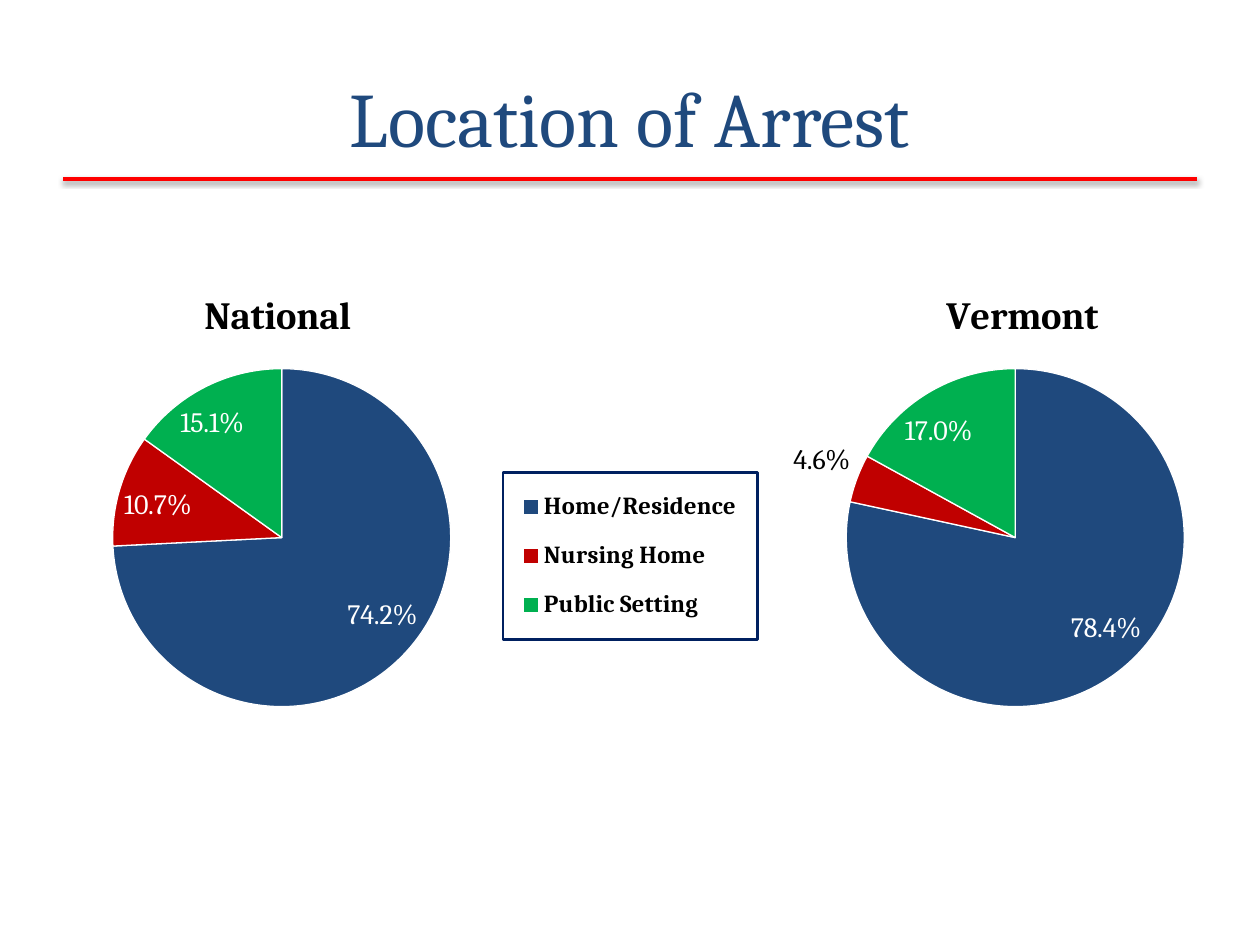
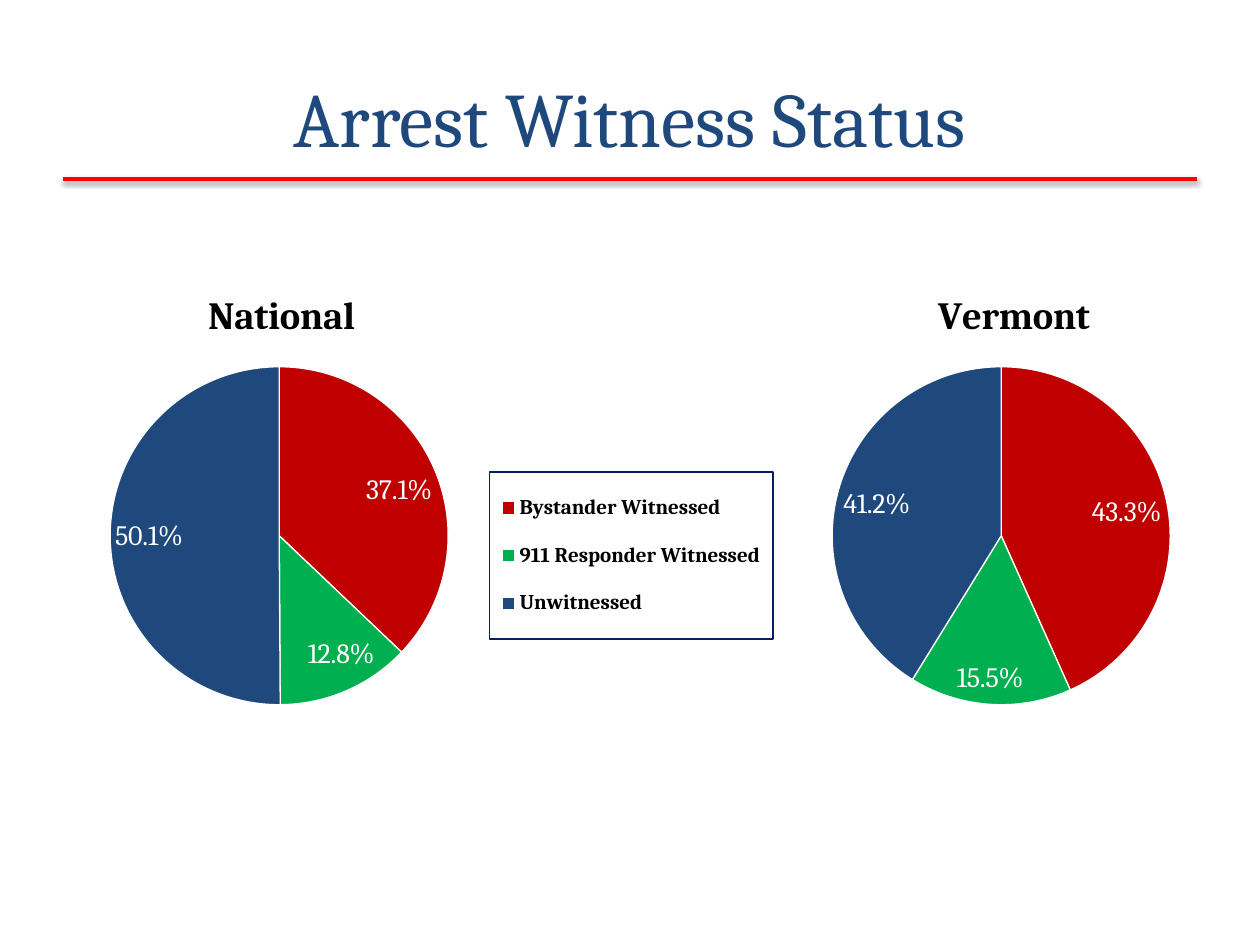
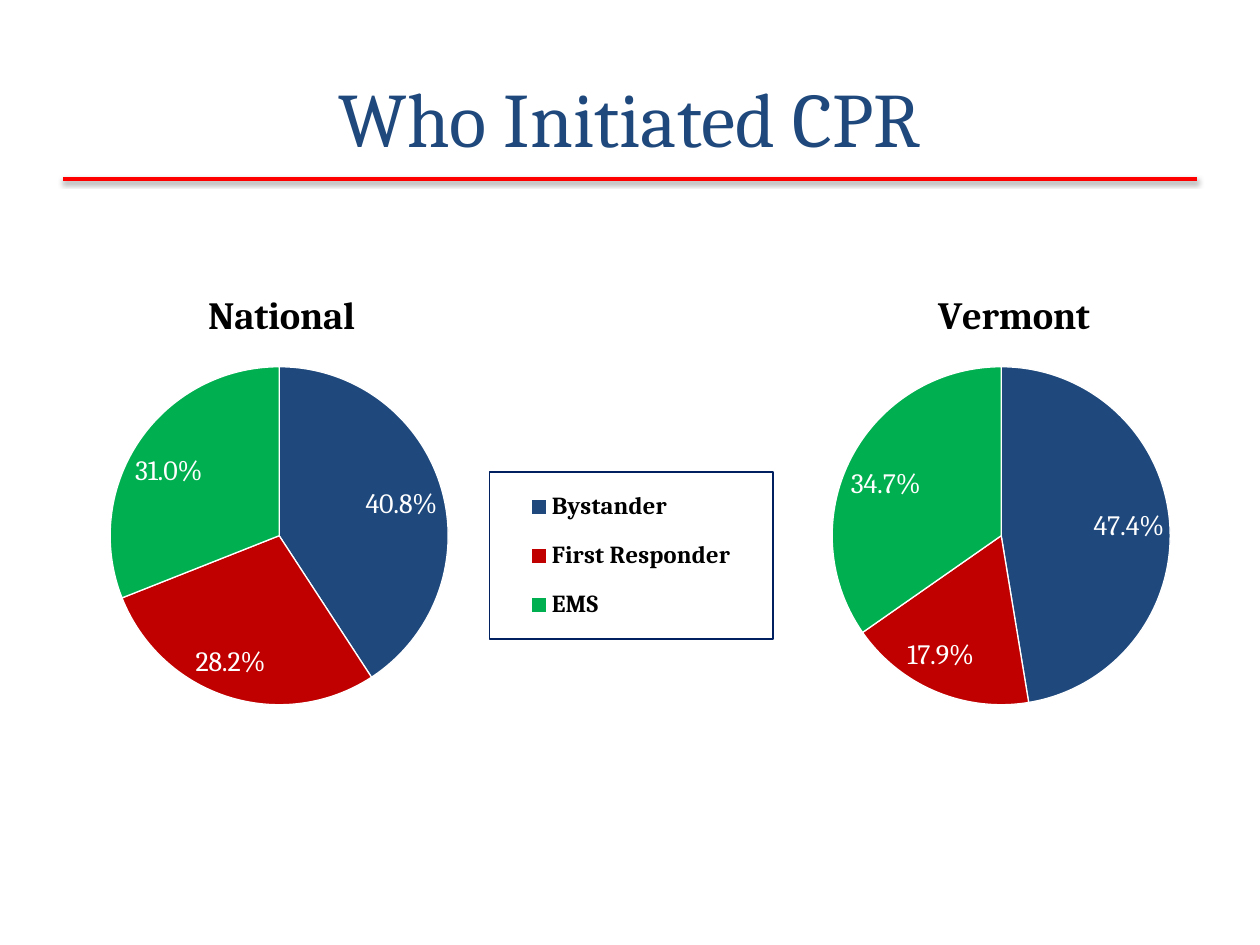
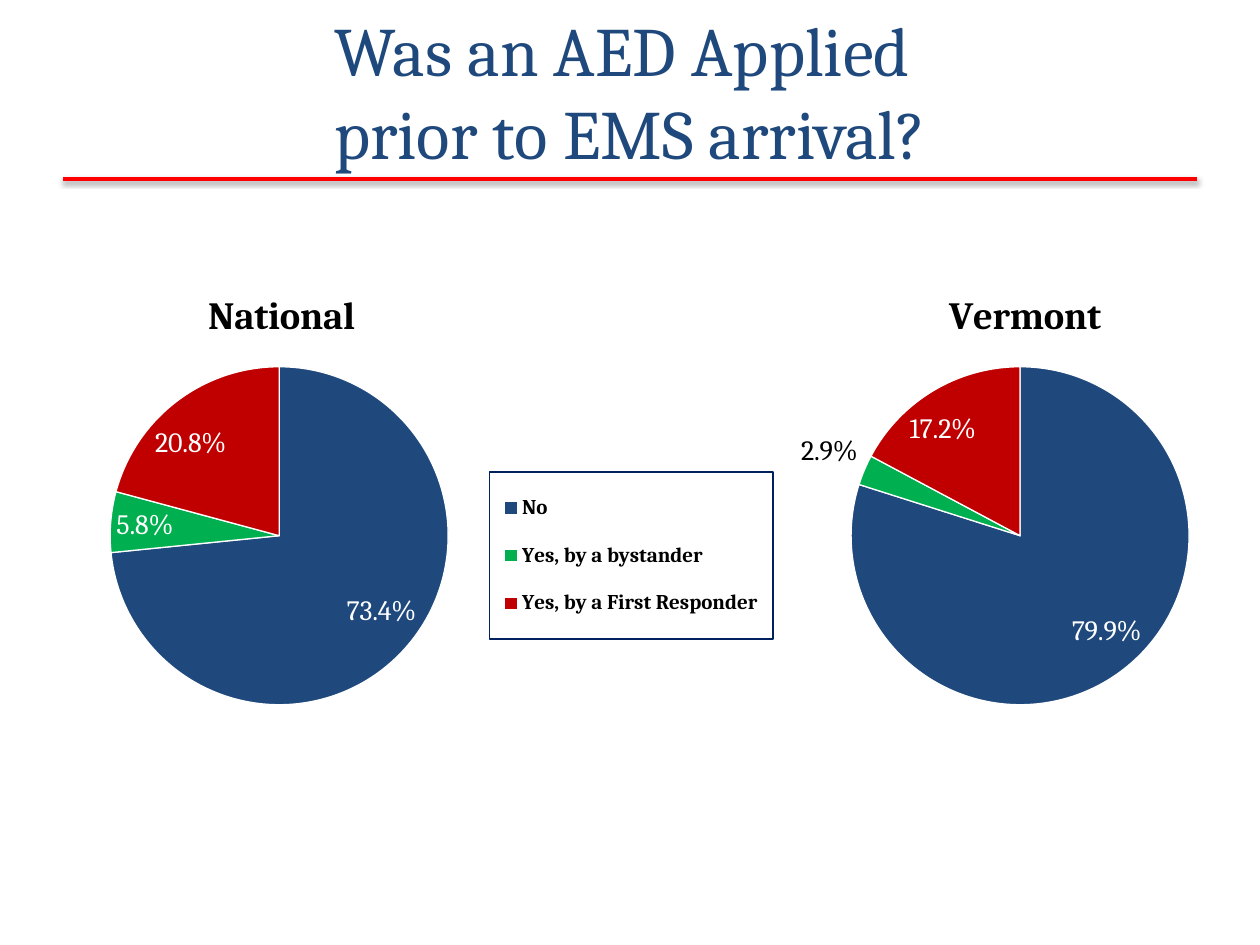
"""Build four slides that compare national and Vermont cardiac arrest figures."""
from dataclasses import dataclass
from typing import NamedTuple, Optional

from lxml import etree
from pptx import Presentation
from pptx import util as u
from pptx.chart.chart import Chart
from pptx.chart.data import CategoryChartData
from pptx.dml.color import RGBColor
from pptx.enum import chart as ch, shapes, text
from pptx.oxml import parse_xml
from pptx.oxml.ns import nsdecls, qn
from pptx.slide import Slide, SlideLayout
from pptx.text.text import Font, TextFrame

BLUE = RGBColor(0x1F, 0x49, 0x7D)
CRIMSON = RGBColor(0xC0, 0x00, 0x00)
GREEN = RGBColor(0x00, 0xB0, 0x50)
RED = RGBColor(0xFF, 0x00, 0x00)
NAVY = RGBColor(0x00, 0x20, 0x60)
WHITE = RGBColor(0xFF, 0xFF, 0xFF)
BLACK = RGBColor(0x00, 0x00, 0x00)
FACE = "Cambria"

MARGIN, CONTENT_WIDTH = 36, 648
RULE_TOP = 102.24
CHART_TOP, CHART_WIDTH, CHART_HEIGHT = 112.32, 450, 356.4
HEADING_TOP = 0.14


class Frame(NamedTuple):
    """Place inside a chart, as fractions of its width and height."""

    x: float
    y: float
    w: Optional[float] = None
    h: Optional[float] = None


@dataclass(frozen=True)
class Legend:
    """Frame, text size and border width of a legend."""

    frame: Frame
    size: float
    border: float


@dataclass(frozen=True)
class Pie:
    """One region's pie with its place on the slide."""

    region: str
    shares: tuple[float, ...]
    left: float
    heading_x: float = 0.27
    width: float = CHART_WIDTH
    outside: Optional[int] = None


@dataclass(frozen=True)
class Comparison:
    """One slide: a question, its answers and two regions."""

    title: str
    answers: dict[str, RGBColor]
    national: Pie
    vermont: Pie
    legend: Legend
    plot: Frame = Frame(0.095, 0.273, 0.548, 0.542)
    title_top: float = 21.6
    title_size: float = 44


WIDE_LEGEND = Frame(0.636, 0.442, 0.36, 0.268)

COMPARISONS = (
    Comparison(
        "Location of Arrest",
        {"Home/Residence": BLUE, "Nursing Home": CRIMSON, "Public Setting": GREEN},
        Pie("National", (74.2, 10.7, 15.1), -8.64),
        Pie("Vermont", (78.4, 4.6, 17), 440.64, 0.26, 370.08, outside=1),
        Legend(Frame(0.658, 0.442, 0.323, 0.268), 14, 1.5),
        plot=Frame(0.103, 0.276, 0.548, 0.542),
    ),
    Comparison(
        "Arrest Witness Status",
        {"Bystander Witnessed": CRIMSON, "911 Responder Witnessed": GREEN,
         "Unwitnessed": BLUE},
        Pie("National", (37.1, 12.8, 50.1), -6.48),
        Pie("Vermont", (43.3, 15.5, 41.2), 406.08, 0.28),
        Legend(WIDE_LEGEND, 12, 1),
    ),
    Comparison(
        "Who Initiated CPR",
        {"Bystander": BLUE, "First Responder": CRIMSON, "EMS": GREEN},
        Pie("National", (40.8, 28.2, 31), -6.48),
        Pie("Vermont", (47.4, 17.9, 34.7), 406.08, 0.28),
        Legend(WIDE_LEGEND, 14, 1),
    ),
    Comparison(
        "Was an AED Applied \vprior to EMS arrival?",
        {"No": BLUE, "Yes, by a bystander": GREEN,
         "Yes, by a First Responder": CRIMSON},
        Pie("National", (73.4, 5.8, 20.8), -6.48),
        Pie("Vermont", (79.9, 2.9, 17.2), 416.88, outside=1),
        Legend(WIDE_LEGEND, 12, 1),
        title_top=6.48,
        title_size=39.6,
    ),
)


def style(font: Font, *, size: float, color: RGBColor = BLACK, bold: bool = False) -> None:
    """Set face, size, colour and weight of a font."""
    font.name, font.size, font.bold = FACE, u.Pt(size), bold
    font.color.rgb = color


def write(frame: TextFrame, words: str, **look) -> None:
    """Put one centred paragraph into a text frame."""
    frame.text = words
    paragraph = frame.paragraphs[0]
    paragraph.alignment = text.PP_ALIGN.CENTER
    for run in paragraph.runs:
        style(run.font, **look)


def place(part: etree._Element, index: int, frame: Frame) -> None:
    """Give a chart part a manual layout as its child at the index."""
    for automatic in part.findall(qn("c:layout")):
        part.remove(automatic)
    settings = [("layoutTarget", "inner")] if part.tag == qn("c:plotArea") else []
    settings += [("xMode", "edge"), ("yMode", "edge")]
    settings += [(key, value) for key, value in frame._asdict().items() if value is not None]
    children = "".join(f'<c:{key} val="{value}"/>' for key, value in settings)
    part.insert(index, parse_xml(
        f'<c:layout {nsdecls("c")}><c:manualLayout>{children}</c:manualLayout></c:layout>'))


def add_rule(slide: Slide, layout: SlideLayout) -> None:
    """Draw the shadowed red rule and hand it to the shared layout."""
    rule = slide.shapes.add_connector(
        shapes.MSO_CONNECTOR.STRAIGHT, u.Pt(MARGIN), u.Pt(RULE_TOP),
        u.Pt(MARGIN + CONTENT_WIDTH), u.Pt(RULE_TOP))
    rule.line.color.rgb, rule.line.width = RED, u.Pt(2)
    rule.element.spPr.append(parse_xml(
        f'<a:effectLst {nsdecls("a")}><a:outerShdw blurRad="{u.Pt(3.1)}" '
        f'dist="{u.Pt(1.6)}" dir="5400000" rotWithShape="0">'
        '<a:srgbClr val="000000"><a:alpha val="38000"/></a:srgbClr>'
        '</a:outerShdw></a:effectLst>'))
    for holder in list(layout.placeholders):
        if holder.placeholder_format.type != shapes.PP_PLACEHOLDER.TITLE:
            holder.element.getparent().remove(holder.element)
    layout.shapes.element.append(rule.element)


def add_title(slide: Slide, topic: Comparison) -> None:
    """Move and fill the title placeholder."""
    title = slide.shapes.title
    title.left, title.top = u.Pt(MARGIN), u.Pt(topic.title_top)
    title.width, title.height = u.Pt(CONTENT_WIDTH), u.Pt(90)
    title.text_frame.auto_size = text.MSO_AUTO_SIZE.NONE
    title.text_frame.vertical_anchor = text.MSO_ANCHOR.MIDDLE
    write(title.text_frame, topic.title, size=topic.title_size, color=BLUE)


def add_legend(chart: Chart, legend: Legend) -> None:
    """Show the bordered legend beside the pie."""
    chart.has_legend = True
    chart.legend.position = ch.XL_LEGEND_POSITION.RIGHT
    chart.legend.include_in_layout = False
    style(chart.legend.font, size=legend.size, bold=True)
    box = chart.element.xpath("c:chart/c:legend")[0]
    place(box, 1, legend.frame)
    box.find(qn("c:txPr")).addprevious(parse_xml(
        f'<c:spPr {nsdecls("c", "a")}><a:ln w="{u.Pt(legend.border)}"><a:solidFill>'
        f'<a:srgbClr val="{NAVY}"/></a:solidFill></a:ln></c:spPr>'))


def add_outside_label(chart: Chart, index: int) -> None:
    """Give a narrow slice a black percentage that reads outside the pie."""
    label = chart.plots[0].series[0].points[index].data_label
    style(label.font, size=16)
    label.position = ch.XL_LABEL_POSITION.BEST_FIT
    entry = chart.element.xpath(".//c:ser/c:dLbls/c:dLbl")[0]
    entry.find(qn("c:showVal")).set("val", "0")
    entry.find(qn("c:showPercent")).set("val", "1")
    entry.find(qn("c:idx")).addnext(parse_xml(
        f'<c:numFmt {nsdecls("c")} formatCode="0.0%" sourceLinked="0"/>'))


def add_pie(slide: Slide, topic: Comparison, pie: Pie) -> Chart:
    """Draw one region's pie chart."""
    data = CategoryChartData()
    data.categories = list(topic.answers)
    data.add_series("Series 1", pie.shares)
    chart = slide.shapes.add_chart(
        ch.XL_CHART_TYPE.PIE, u.Pt(pie.left), u.Pt(CHART_TOP),
        u.Pt(pie.width), u.Pt(CHART_HEIGHT), data).chart
    style(chart.font, size=18)
    chart.has_legend = False
    chart.has_title = True
    write(chart.chart_title.text_frame, pie.region, size=22, bold=True)
    place(chart.element.xpath("c:chart/c:title")[0], 1, Frame(pie.heading_x, HEADING_TOP))
    place(chart.element.xpath("c:chart/c:plotArea")[0], 0, topic.plot)

    plot = chart.plots[0]
    plot.vary_by_categories = True
    series = plot.series[0]
    for index, color in enumerate(topic.answers.values()):
        slice_format = series.points[index].format
        slice_format.fill.solid()
        slice_format.fill.fore_color.rgb = color
        slice_format.line.color.rgb = WHITE
        slice_format.line.width = u.Pt(0.75)
    labels = series.data_labels
    labels.show_percentage, labels.show_value = True, False
    labels.number_format, labels.number_format_is_linked = "0.0%", False
    labels.position = ch.XL_LABEL_POSITION.BEST_FIT
    style(labels.font, size=16, color=WHITE)
    if pie.outside is not None:
        add_outside_label(chart, pie.outside)
    return chart


def main() -> None:
    """Build and save the deck."""
    deck = Presentation()
    deck.slide_width, deck.slide_height = u.Pt(720), u.Pt(540)
    title_only = deck.slide_layouts[5]
    for number, topic in enumerate(COMPARISONS):
        slide = deck.slides.add_slide(title_only)
        if number == 0:
            add_rule(slide, title_only)
        add_title(slide, topic)
        add_legend(add_pie(slide, topic, topic.national), topic.legend)
        add_pie(slide, topic, topic.vermont)
    deck.save("out.pptx")


if __name__ == "__main__":
    main()
